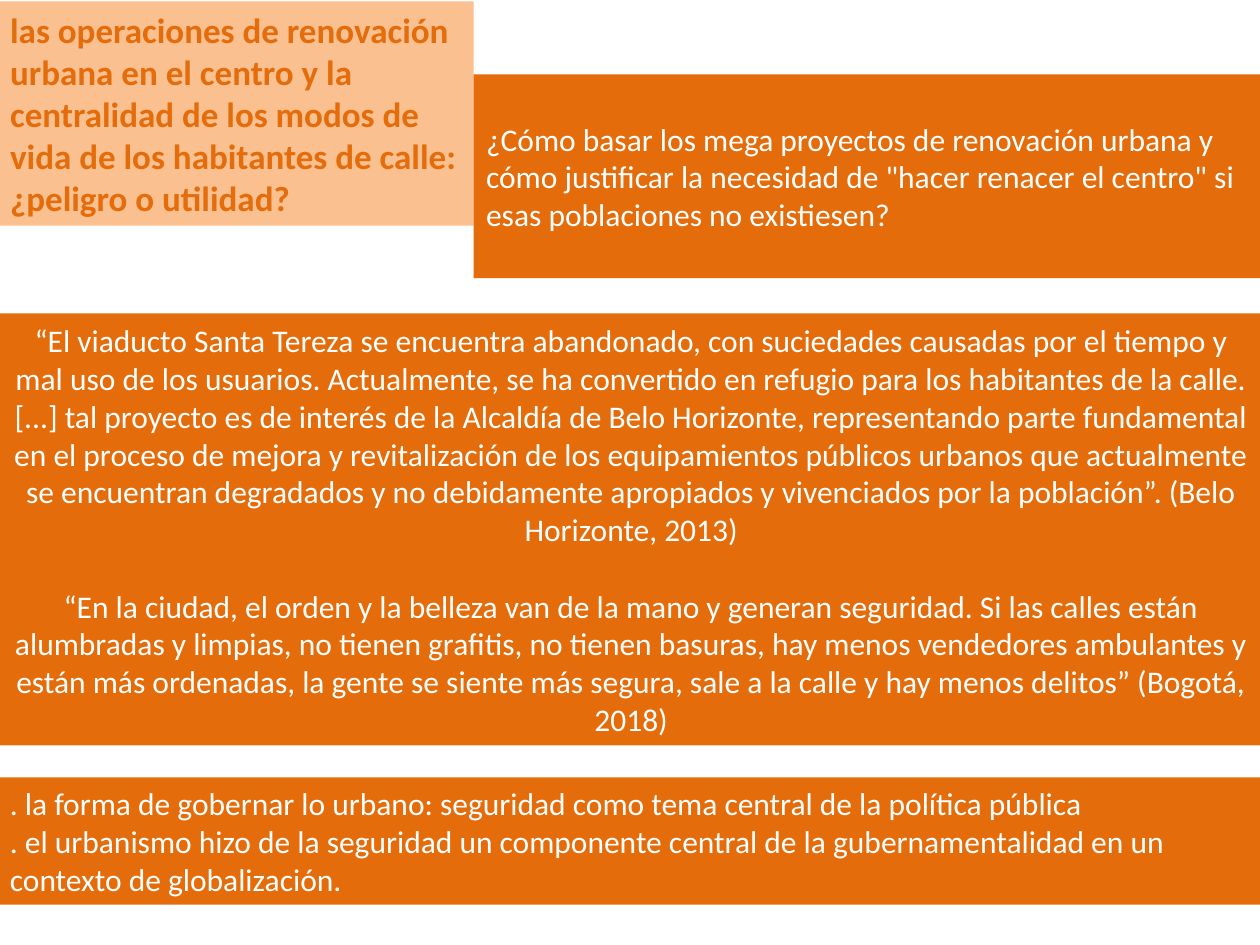
from pptx import Presentation
from pptx import util as u
from pptx.dml.color import RGBColor
from pptx.enum import shapes, text

ORANGE, PEACH, WHITE = "E46C0A", "FAC090", "FFFFFF"


def paint(fill, color):
    fill.solid()
    fill.fore_color.rgb = RGBColor.from_string(color)


def write(panel, lines, size, color, align, gap=0, bold=False):
    frame = panel.text_frame
    frame.word_wrap = True
    frame.auto_size = text.MSO_AUTO_SIZE.NONE
    frame.vertical_anchor = text.MSO_ANCHOR.MIDDLE
    frame.text = "\n".join(lines)
    for number, paragraph in enumerate(frame.paragraphs):
        paragraph.alignment = align
        paragraph.space_before = u.Pt(gap if number else 0)
        paragraph.font.name = "Calibri"
        paragraph.font.size = u.Pt(size)
        paragraph.font.bold = bold
        paint(paragraph.font.fill, color)


LEFT, CENTER = text.PP_ALIGN.LEFT, text.PP_ALIGN.CENTER

deck = Presentation()
deck.slide_width, deck.slide_height = u.Cm(25.4), u.Cm(19.05)
slide = deck.slides.add_slide(deck.slide_layouts[5])

heading = slide.shapes.title
heading.left, heading.top = u.Cm(-0.05), u.Cm(0.03)
heading.width, heading.height = u.Cm(9.6), u.Cm(4.52)
paint(heading.fill, PEACH)
write(heading, [
    "las operaciones de renovación urbana en el centro y la centralidad de los modos "
    "de vida de los habitantes de calle: ¿peligro o utilidad?",
], 20, ORANGE, LEFT, bold=True)

quotes = [
    "“El viaducto Santa Tereza se encuentra abandonado, con suciedades causadas por el "
    "tiempo y mal uso de los usuarios. Actualmente, se ha convertido en refugio para los "
    "habitantes de la calle. [...] tal proyecto es de interés de la Alcaldía de Belo "
    "Horizonte, representando parte fundamental en el proceso de mejora y revitalización "
    "de los equipamientos públicos urbanos que actualmente se encuentran degradados y no "
    "debidamente apropiados y vivenciados por la población”. (Belo Horizonte, 2013)",
    "“En la ciudad, el orden y la belleza van de la mano y generan seguridad. Si las "
    "calles están alumbradas y limpias, no tienen grafitis, no tienen basuras, hay menos "
    "vendedores ambulantes y están más ordenadas, la gente se siente más segura, sale a "
    "la calle y hay menos delitos” (Bogotá, 2018)",
]
conclusions = [
    ". la forma de gobernar lo urbano: seguridad como tema central de la política pública",
    ". el urbanismo hizo de la seguridad un componente central de la gubernamentalidad "
    "en un contexto de globalización.",
]
question = [
    "¿Cómo basar los mega proyectos de renovación urbana y cómo justificar la necesidad "
    "de \"hacer renacer el centro\" si esas poblaciones no existiesen?",
]

for left, top, width, height, lines, align, gap in [
    (0, 6.32, 25.45, 8.71, quotes, CENTER, 22),
    (-0.05, 15.67, 25.45, 2.57, conclusions, LEFT, 0),
    (9.55, 1.5, 15.9, 4.11, question, LEFT, 0),
]:
    panel = slide.shapes.add_shape(
        shapes.MSO_SHAPE.RECTANGLE, u.Cm(left), u.Cm(top), u.Cm(width), u.Cm(height))
    panel.shadow.inherit = False
    panel.line.fill.background()
    paint(panel.fill, ORANGE)
    write(panel, lines, 18, WHITE, align, gap)

deck.save("out.pptx")
